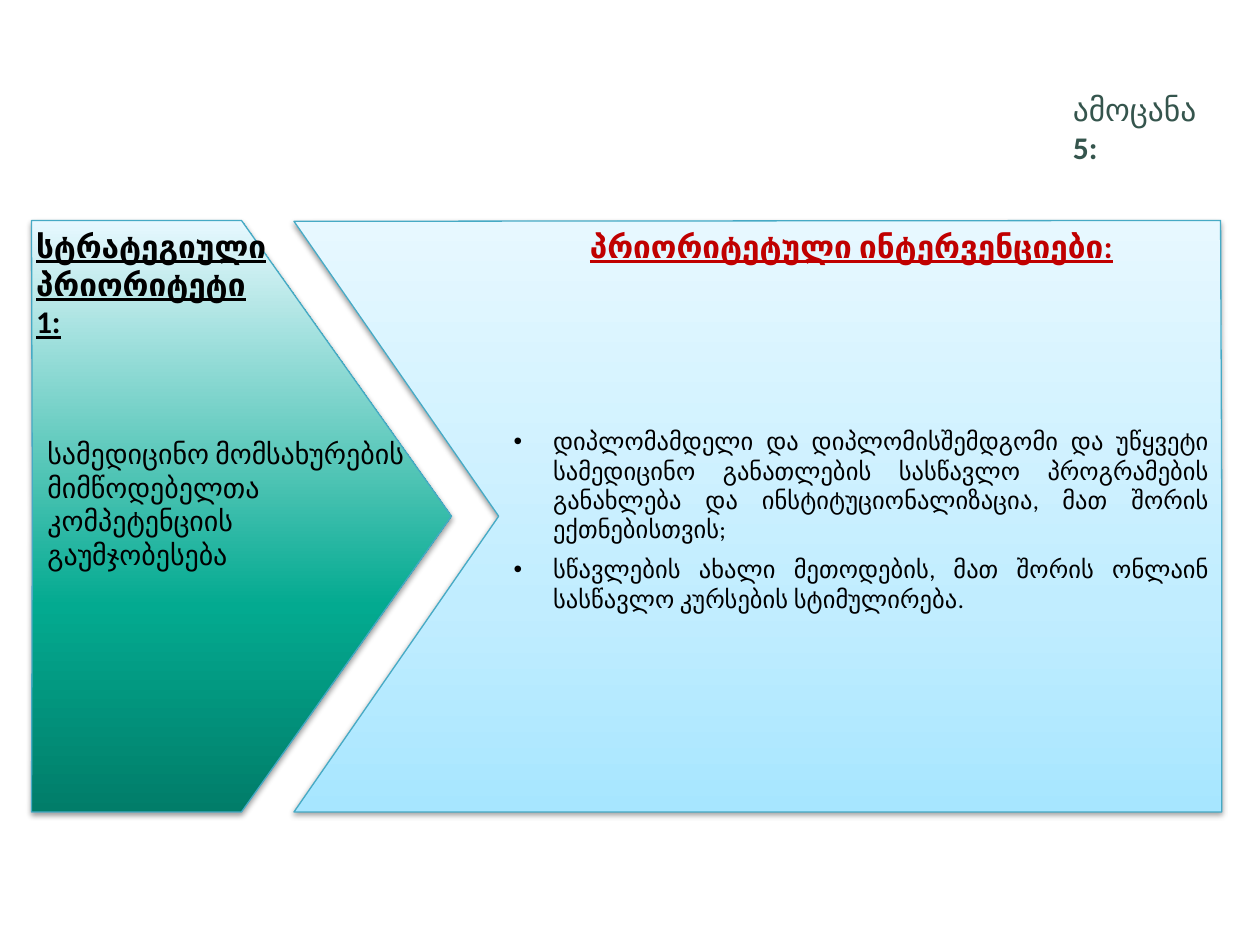
from dataclasses import dataclass

import lxml.etree
import pptx
import pptx.dml.color
import pptx.enum.text
import pptx.oxml.ns
import pptx.util
import copy

Pt = pptx.util.Pt
RGBColor = pptx.dml.color.RGBColor
PP_ALIGN = pptx.enum.text.PP_ALIGN
qn = pptx.oxml.ns.qn

BLACK = RGBColor(0x00, 0x00, 0x00)
RED = RGBColor(0xC0, 0x00, 0x00)
PINE = RGBColor(0x35, 0x55, 0x4D)
OUTLINE = RGBColor(0x46, 0xAA, 0xC5)
PALE = RGBColor(0xE7, 0xF8, 0xFF)
GREEN = RGBColor(0x03, 0xAA, 0x90)
DARK_GREEN = RGBColor(0x01, 0x7D, 0x69)
SKY = RGBColor(0xC1, 0xED, 0xFF)
DEEP_SKY = RGBColor(0xA7, 0xE6, 0xFF)

TOP, MIDDLE, BOTTOM = 126, 295, 464
STOPS = (0, 0.35, 1)


@dataclass
class Panel:
    points: list[tuple[float, float]]
    colors: tuple[RGBColor, RGBColor, RGBColor]


@dataclass
class Run:
    text: str
    bold: bool = False


PANELS = [
    Panel([(18, TOP), (138, TOP), (258, MIDDLE), (138, BOTTOM), (18, BOTTOM),
           (18.5, MIDDLE)], (DARK_GREEN, GREEN, PALE)),
    Panel([(168, 126.5), (697.5, TOP), (698.2, MIDDLE), (698.2, BOTTOM),
           (168, BOTTOM), (285, MIDDLE)], (DEEP_SKY, SKY, PALE)),
]

INTERVENTIONS = [
    "დიპლომამდელი და დიპლომისშემდგომი და უწყვეტი სამედიცინო განათლების "
    "სასწავლო პროგრამების განახლება და ინსტიტუციონალიზაცია, მათ შორის ექთნებისთვის;",
    "სწავლების ახალი მეთოდების, მათ შორის ონლაინ სასწავლო კურსების სტიმულირება.",
]


def add_panel(s, panel: Panel) -> None:
    (x, y), *rest = [(Pt(px), Pt(py)) for px, py in panel.points]
    builder = s.shapes.build_freeform(x, y)
    builder.add_line_segments(rest, close=True)
    sp = builder.convert_to_shape()
    sp.fill.gradient()
    sp.fill.gradient_angle = 90
    stop_list = sp._element.spPr.find(".//" + qn("a:gsLst"))
    stop_list.append(copy.deepcopy(stop_list[0]))
    for stop, position, color in zip(sp.fill.gradient_stops, STOPS, panel.colors):
        stop.position = position
        stop.color.rgb = color
    sp.line.color.rgb = OUTLINE
    sp.line.width = Pt(0.75)
    sp.shadow.inherit = False
    effects = sp._element.spPr.find(qn("a:effectLst"))
    shadow = lxml.etree.SubElement(
        effects, qn("a:outerShdw"), blurRad=str(Pt(3.1)), dist=str(Pt(1.6)),
        dir="5400000", rotWithShape="0")
    color = lxml.etree.SubElement(shadow, qn("a:srgbClr"), val=str(BLACK))
    lxml.etree.SubElement(color, qn("a:alpha"), val="38000")


def add_bullet(p) -> None:
    pPr = p._p.get_or_add_pPr()
    pPr.set("marL", str(Pt(27)))
    pPr.set("indent", str(Pt(-22.5)))
    lxml.etree.SubElement(pPr, qn("a:buFont"), typeface="Arial")
    lxml.etree.SubElement(pPr, qn("a:buChar"), char="•")


def add_text(s, paragraphs: list[list[Run]], *, left: float, top: float,
             width: float, height: float, size: float = 18,
             color: RGBColor = BLACK, underline: bool = False,
             align: PP_ALIGN = PP_ALIGN.LEFT, space: float = 0,
             bullet: bool = False) -> None:
    sp = s.shapes.add_textbox(Pt(left), Pt(top), Pt(width), Pt(height))
    tf = sp.text_frame
    tf.word_wrap = True
    for i, runs in enumerate(paragraphs):
        p = tf.add_paragraph() if i else tf.paragraphs[0]
        p.alignment = align
        p.space_before = p.space_after = Pt(space)
        if bullet:
            add_bullet(p)
        for run in runs:
            r = p.add_run()
            r.text = run.text
            r.font.name = "Calibri"
            r.font.size = Pt(size)
            r.font.bold = run.bold
            r.font.underline = underline
            r.font.color.rgb = color


def main() -> None:
    prs = pptx.Presentation()
    prs.slide_width, prs.slide_height = Pt(720), Pt(540)
    s = prs.slides.add_slide(prs.slide_layouts[6])

    add_text(s, [[Run("ამოცანა"), Run(" 5:", bold=True)]],
             left=606, top=48, width=97, height=29, color=PINE)
    for panel in PANELS:
        add_panel(s, panel)
    add_text(s, [[Run(text)] for text in INTERVENTIONS],
             left=282, top=240, width=416, height=115, size=14,
             align=PP_ALIGN.JUSTIFY, space=3, bullet=True)
    add_text(s, [[Run("სამედიცინო მომსახურების მიმწოდებელთა კომპეტენციის გაუმჯობესება")]],
             left=20, top=246, width=220, height=85, size=16)
    add_text(s, [[Run("პრიორიტეტული ინტერვენციები:", bold=True)]],
             left=330, top=TOP, width=342, height=29, color=RED,
             underline=True, space=6)
    add_text(s, [[Run("სტრატეგიული პრიორიტეტი 1:", bold=True)]],
             left=13.5, top=TOP, width=148.5, height=51, underline=True)

    prs.save("out.pptx")


if __name__ == "__main__":
    main()
